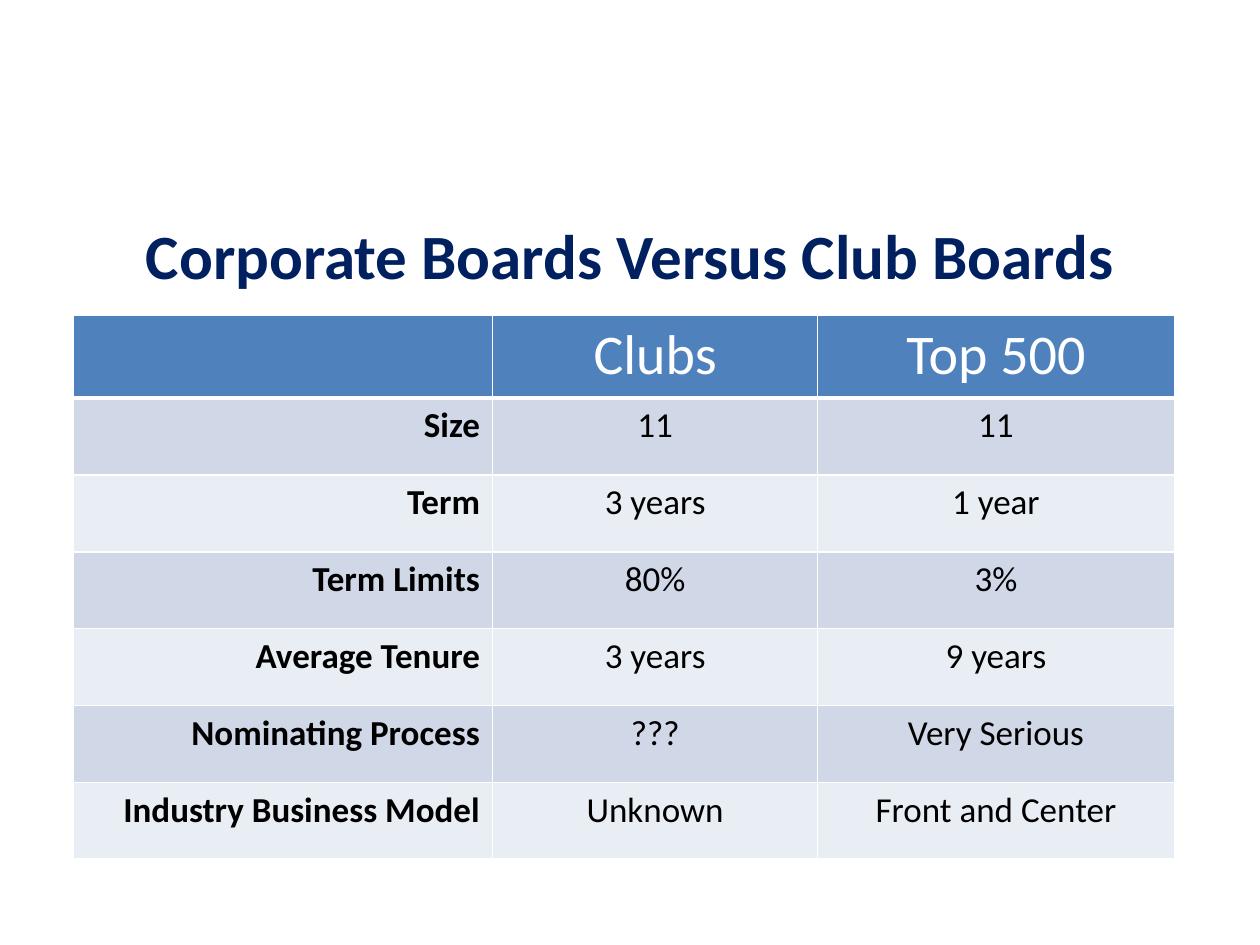
from pptx import Presentation
from pptx.dml.color import RGBColor
from pptx.enum import text as t
from pptx.oxml import parse_xml
from pptx.oxml import ns
from pptx.util import Inches, Pt

HUES = {"navy": "002060", "head": "4F81BD", "odd": "D0D8E8",
        "even": "E9EDF4", "white": "FFFFFF", "black": "000000"}
ROWS = [
    ("", "Clubs", "Top 500"),
    ("Size", "11", "11"),
    ("Term", "3 years", "1 year"),
    ("Term Limits", "80%", "3%"),
    ("Average Tenure", "3 years", "9 years"),
    ("Nominating Process", "???", "Very Serious"),
    ("Industry Business Model", "Unknown", "Front and Center"),
]
WIDTHS = (3.33, 2.58, 2.83)
HEAD, BODY = 0.66, 0.61


def hue(name):
    return RGBColor.from_string(HUES[name])


def style(para, size, color, bold, align):
    para.alignment = align
    for run in para.runs:
        font = run.font
        font.name, font.size, font.bold = "Calibri", Pt(size), bold
        font.color.rgb = hue(color)


def edge(cell, low):
    """Draw white cell borders, with the bottom one low points wide."""
    props = cell._tc.get_or_add_tcPr()
    for side, width in (("L", 1), ("R", 1), ("T", 1), ("B", low)):
        props.append(parse_xml(
            f'<a:ln{side} {ns.nsdecls("a")} w="{Pt(width)}"><a:solidFill>'
            f'<a:srgbClr val="{HUES["white"]}"/></a:solidFill></a:ln{side}>'))


def add_title(slide, left, top, width, height):
    title = slide.shapes.title
    title.left, title.top = Inches(left), Inches(top)
    title.width, title.height = Inches(width), Inches(height)
    frame = title.text_frame
    frame.text = "Corporate Boards Versus Club Boards"
    frame.word_wrap = True
    frame.auto_size = t.MSO_AUTO_SIZE.NONE
    frame.vertical_anchor = t.MSO_ANCHOR.TOP
    para = frame.paragraphs[0]
    props = para._p.get_or_add_pPr()
    props.set("marL", str(Inches(0.37)))
    props.set("indent", str(Inches(-0.37)))
    style(para, 36, "navy", True, t.PP_ALIGN.CENTER)


def add_grid(slide, left, top):
    high = HEAD + BODY * (len(ROWS) - 1)
    table = slide.shapes.add_table(
        len(ROWS), len(WIDTHS), Inches(left), Inches(top),
        Inches(sum(WIDTHS)), Inches(high)).table
    for col, width in zip(table.columns, WIDTHS):
        col.width = Inches(width)
    for r, row in enumerate(ROWS):
        table.rows[r].height = Inches(BODY if r else HEAD)
        band = "head" if r == 0 else "odd" if r % 2 else "even"
        for c, label in enumerate(row):
            cell = table.cell(r, c)
            edge(cell, 1 if r else 3)
            cell.fill.solid()
            cell.fill.fore_color.rgb = hue(band)
            cell.text_frame.text = label
            align = t.PP_ALIGN.CENTER if c else t.PP_ALIGN.RIGHT
            style(cell.text_frame.paragraphs[0], 20 if r else 32,
                  "black" if r else "white", c == 0, align)


def main():
    deck = Presentation()
    deck.slide_width, deck.slide_height = Inches(10), Inches(7.5)
    slide = deck.slides.add_slide(deck.slide_layouts[5])
    add_title(slide, 0, 1.67, 10, 0.81)
    add_grid(slide, 0.58, 2.5)
    deck.save("out.pptx")


if __name__ == "__main__":
    main()
